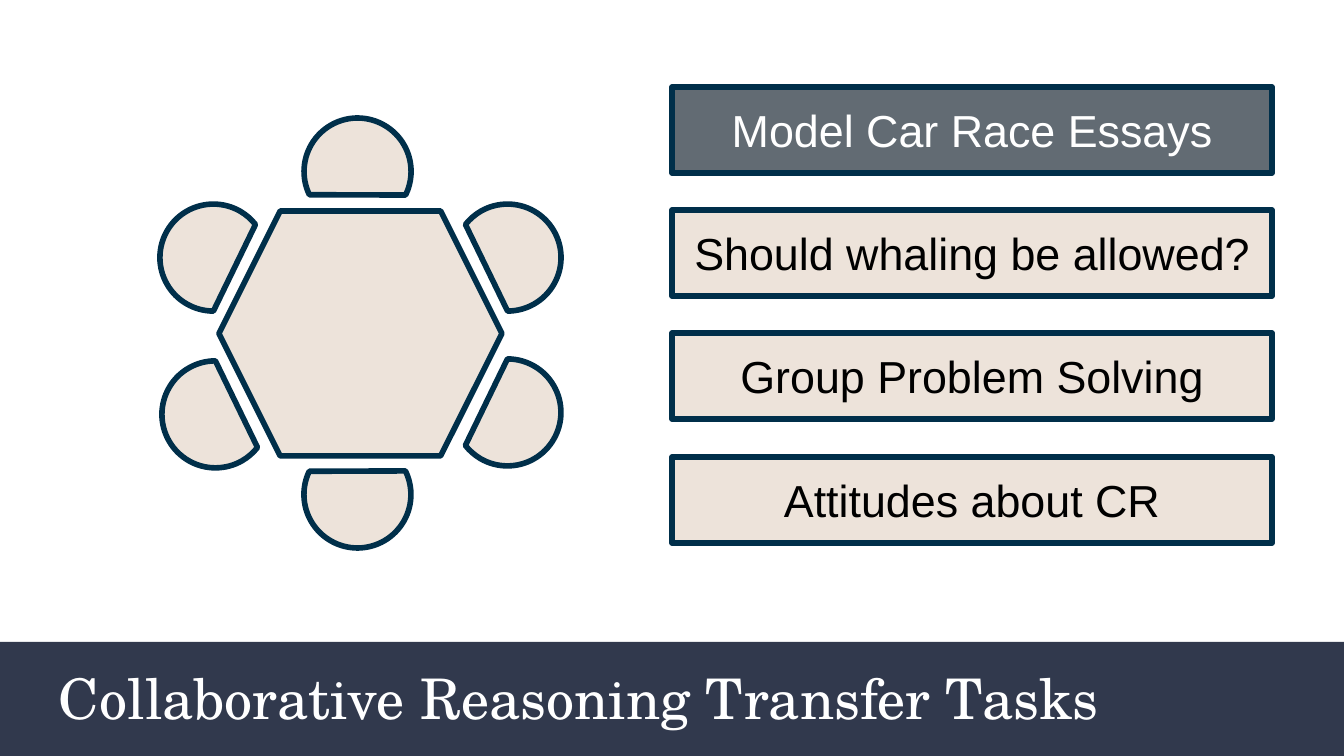
"""Build the slide on collaborative reasoning transfer tasks."""
from pptx import Presentation
from pptx.dml.color import RGBColor
from pptx.enum.shapes import MSO_SHAPE as SHAPE
from pptx.enum.text import MSO_ANCHOR as ANCHOR, MSO_AUTO_SIZE as AUTO, PP_ALIGN as ALIGN
from pptx.util import Emu, Pt

SCALE = 914400 / 134.4
NAVY = RGBColor(0x31, 0x39, 0x4D)
OUTLINE = RGBColor(0x00, 0x2F, 0x4A)
SAND = RGBColor(0xED, 0xE3, 0xDA)
GREY = RGBColor(0x62, 0x6B, 0x73)
WHITE = RGBColor(0xFF, 0xFF, 0xFF)
BLACK = RGBColor(0x00, 0x00, 0x00)

SEAT_SIZE = 107
SEATS = [
    (162, 361, 0, False),
    (454, 359, 0, True),
    (160, 204, 180, True),
    (454, 204, 180, False),
    (304, 441, 295.7, False),
    (304, 118, 244.3, True),
]
TASKS = [
    ("Model Car Race Essays", GREY, WHITE),
    ("Should whaling be allowed?", SAND, BLACK),
    ("Group Problem Solving", SAND, BLACK),
    ("Attitudes about CR", SAND, BLACK),
]


def px(n):
    """Turn pixels into EMU."""
    return Emu(round(n * SCALE))


def add_shape(shapes, kind, box, fill, line=OUTLINE):
    """Add a flat shape with an optional outline."""
    sp = shapes.add_shape(kind, *map(px, box))
    sp.shadow.inherit = False
    sp.fill.solid()
    sp.fill.fore_color.rgb = fill
    if line is None:
        sp.line.fill.background()
    else:
        sp.line.color.rgb = line
        sp.line.width = Pt(3)
    return sp


def set_text(sp, text, font, size, color, align):
    """Write one line of text, centred vertically."""
    tf = sp.text_frame
    tf.word_wrap = True
    tf.auto_size = AUTO.NONE
    tf.vertical_anchor = ANCHOR.MIDDLE
    tf.margin_left = tf.margin_right = tf.margin_top = tf.margin_bottom = px(13)
    p = tf.paragraphs[0]
    p.alignment = align
    r = p.add_run()
    r.text = text
    r.font.name = font
    r.font.size = Pt(size)
    r.font.color.rgb = color


def add_title(slide, text):
    """Place the title on a dark band at the foot of the slide."""
    band = add_shape(slide.shapes, SHAPE.RECTANGLE, (0, 642, 1344, 114), NAVY, None)
    title = slide.shapes.title
    title.element.addprevious(band.element)
    title.left, title.top, title.width, title.height = map(px, (46, 664, 1173, 67))
    set_text(title, text, "TeX Gyre Schola", 30, WHITE, ALIGN.LEFT)


def add_seat(shapes, left, top, rotation, flipped):
    """Add a chair as a chord facing the table."""
    sp = add_shape(shapes, SHAPE.CHORD, (left, top, SEAT_SIZE, SEAT_SIZE), SAND)
    sp.adjustments[0] = 22.9
    sp.adjustments[1] = 162
    sp.rotation = rotation
    if flipped:
        sp.element.spPr.xfrm.set("flipH", "1")


def add_table_with_seats(slide):
    """Group a hexagonal table with its six chairs."""
    shapes = slide.shapes.add_group_shape().shapes
    add_shape(shapes, SHAPE.HEXAGON, (219, 211, 283, 245), SAND)
    for seat in SEATS:
        add_seat(shapes, *seat)


def add_tasks(slide):
    """Stack the task boxes at equal steps."""
    for i, (text, fill, color) in enumerate(TASKS):
        box = (672, 87 + i * 370 // 3, 600, 86)
        sp = add_shape(slide.shapes, SHAPE.RECTANGLE, box, fill)
        set_text(sp, text, "Arial", 24, color, ALIGN.CENTER)


def main():
    """Build and save the slide."""
    prs = Presentation()
    prs.slide_width, prs.slide_height = px(1344), px(756)
    slide = prs.slides.add_slide(prs.slide_layouts[5])
    add_title(slide, "Collaborative Reasoning Transfer Tasks")
    add_table_with_seats(slide)
    add_tasks(slide)
    prs.save("out.pptx")


if __name__ == "__main__":
    main()
